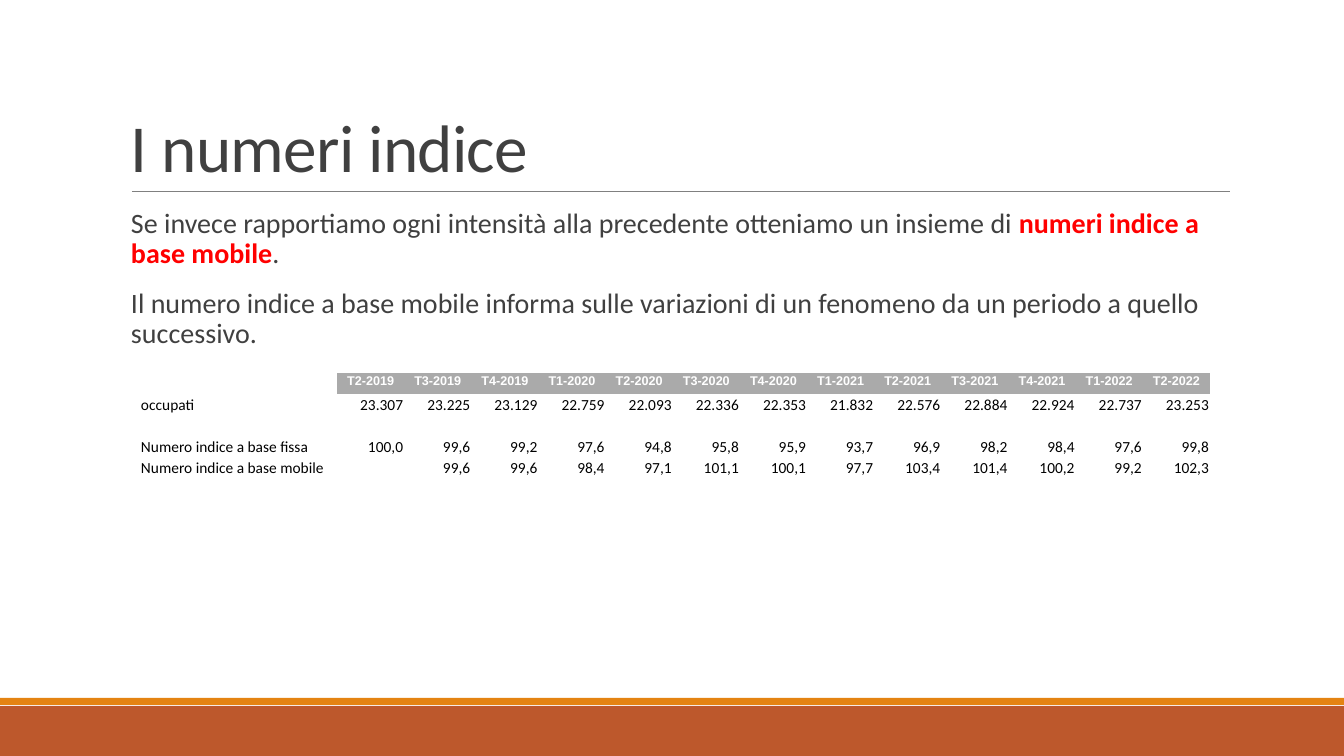
from dataclasses import dataclass

from lxml import etree
from pptx import Presentation
from pptx.dml.color import RGBColor
from pptx.enum.shapes import MSO_CONNECTOR, MSO_SHAPE
from pptx.enum.text import MSO_ANCHOR, PP_ALIGN
from pptx.oxml.ns import qn
from pptx.util import Pt

LEFT, CENTER, RIGHT = PP_ALIGN.LEFT, PP_ALIGN.CENTER, PP_ALIGN.RIGHT
TOP, BOTTOM = MSO_ANCHOR.TOP, MSO_ANCHOR.BOTTOM
RECTANGLE, STRAIGHT = MSO_SHAPE.RECTANGLE, MSO_CONNECTOR.STRAIGHT
NO_STYLE_NO_GRID = "{2D5ABB26-0587-4C30-8999-92F81FD0307C}"
EMU_PER_INCH, PX_PER_INCH = 914400, 100.8


@dataclass(frozen=True)
class Theme:
    text: str = "404040"
    accent: str = "FF0000"
    rule: str = "808080"
    footer: str = "BD582C"
    footer_edge: str = "E48312"
    header_fill: str = "AAAAAA"
    header_text: str = "FFFFFF"
    cell_text: str = "000000"
    font: str = "Calibri"
    header_font: str = "Arial"
    title_size: int = 48
    body_size: int = 20
    header_size: int = 9
    cell_size: int = 11


theme = Theme()


def px(length):
    return round(length * EMU_PER_INCH / PX_PER_INCH)


def write(paragraph, text, *, size, color=theme.text, font=theme.font, bold=False,
          align=LEFT, line_spacing=None, tracking=None):
    """Append one formatted run; an empty text only sets the height of its line."""
    paragraph.alignment = align
    if line_spacing:
        paragraph.line_spacing = line_spacing
    if not text:
        etree.SubElement(paragraph._p, qn("a:endParaRPr"), sz=str(size * 100))
        return
    run = paragraph.add_run()
    run.text = text
    run.font.name, run.font.size, run.font.bold = font, Pt(size), bold
    run.font.color.rgb = RGBColor.from_string(color)
    if tracking:
        run.font._element.set("spc", str(tracking))


presentation = Presentation()
presentation.slide_width, presentation.slide_height = px(1344), px(756)
slide = presentation.slides.add_slide(presentation.slide_layouts[6])
shapes = slide.shapes

# Footer bands and title rule
for top, height, color in ((706, 50, theme.footer), (698, 7, theme.footer_edge)):
    band = shapes.add_shape(RECTANGLE, 0, px(top), px(1344), px(height))
    band.shadow.inherit = False
    band.fill.solid()
    band.fill.fore_color.rgb = RGBColor.from_string(color)
    band.line.fill.background()

title_rule = shapes.add_connector(STRAIGHT, px(132), px(191), px(1230), px(191))
title_rule.line.color.rgb = RGBColor.from_string(theme.rule)
title_rule.line.width = Pt(0.5)
etree.SubElement(title_rule._element.spPr, qn("a:effectLst"))

# Title
title = shapes.add_textbox(px(121), px(31), px(1109), px(160)).text_frame
title.word_wrap = True
title.vertical_anchor = BOTTOM
write(title.paragraphs[0], "I numeri indice", size=theme.title_size,
      line_spacing=0.85, tracking=-50)

# Body
body = shapes.add_textbox(px(121), px(204), px(1109), px(443)).text_frame
body.word_wrap = True
body.margin_left = body.margin_right = 0
body_paragraphs = (
    (("Se invece rapportiamo ogni intensità alla precedente otteniamo un insieme di ", False),
     ("numeri indice a base mobile", True),
     (".", False)),
    (("Il numero indice a base mobile informa sulle variazioni di un fenomeno "
      "da un periodo a quello successivo.", False),),
)
for index, runs in enumerate(body_paragraphs):
    paragraph = body.add_paragraph() if index else body.paragraphs[0]
    paragraph.space_before = Pt(12 if index else 0)
    paragraph.space_after = Pt(2)
    paragraph._p.get_or_add_pPr().set("marL", str(px(10)))
    for text, emphasis in runs:
        write(paragraph, text, size=theme.body_size, bold=emphasis, line_spacing=0.9,
              color=theme.accent if emphasis else theme.text)

# Table: both index rows follow from the number of people employed
employed = [23307, 23225, 23129, 22759, 22093, 22336, 22353,
            21832, 22576, 22884, 22924, 22737, 23253]
quarters = [f"T{step % 4 + 1}-{2019 + step // 4}" for step in range(1, len(employed) + 1)]
fixed_base = [100 * value / employed[0] for value in employed]
mobile_base = [100 * value / previous for previous, value in zip(employed, employed[1:])]
table_rows = [
    ["", *quarters],
    ["occupati", *(f"{value:,}".replace(",", ".") for value in employed)],
    [""] * (len(employed) + 1),
    ["Numero indice a base fissa",
     *(f"{value:.1f}".replace(".", ",") for value in fixed_base)],
    ["Numero indice a base mobile", "",
     *(f"{value:.1f}".replace(".", ",") for value in mobile_base)],
]

table = shapes.add_table(len(table_rows), len(employed) + 1,
                         px(140), px(373), px(1070), px(105)).table
table.first_row = table.horz_banding = False
table._tbl.tblPr.find(qn("a:tableStyleId")).text = NO_STYLE_NO_GRID
for index, column in enumerate(table.columns):
    column.width = px(873) // len(employed) if index else px(197)

for row_index, texts in enumerate(table_rows):
    table.rows[row_index].height = px(21)
    for column_index, text in enumerate(texts):
        cell = table.cell(row_index, column_index)
        cell.margin_left = cell.margin_right = cell.margin_top = px(1)
        cell.margin_bottom = 0
        paragraph = cell.text_frame.paragraphs[0]
        if row_index == 0 and column_index:
            cell.vertical_anchor = TOP
            cell.fill.solid()
            cell.fill.fore_color.rgb = RGBColor.from_string(theme.header_fill)
            write(paragraph, text, size=theme.header_size, color=theme.header_text,
                  font=theme.header_font, bold=True, align=CENTER)
        else:
            cell.vertical_anchor = BOTTOM
            cell.fill.background()
            write(paragraph, text, size=theme.cell_size, color=theme.cell_text,
                  align=RIGHT if column_index else LEFT)

presentation.save("out.pptx")
